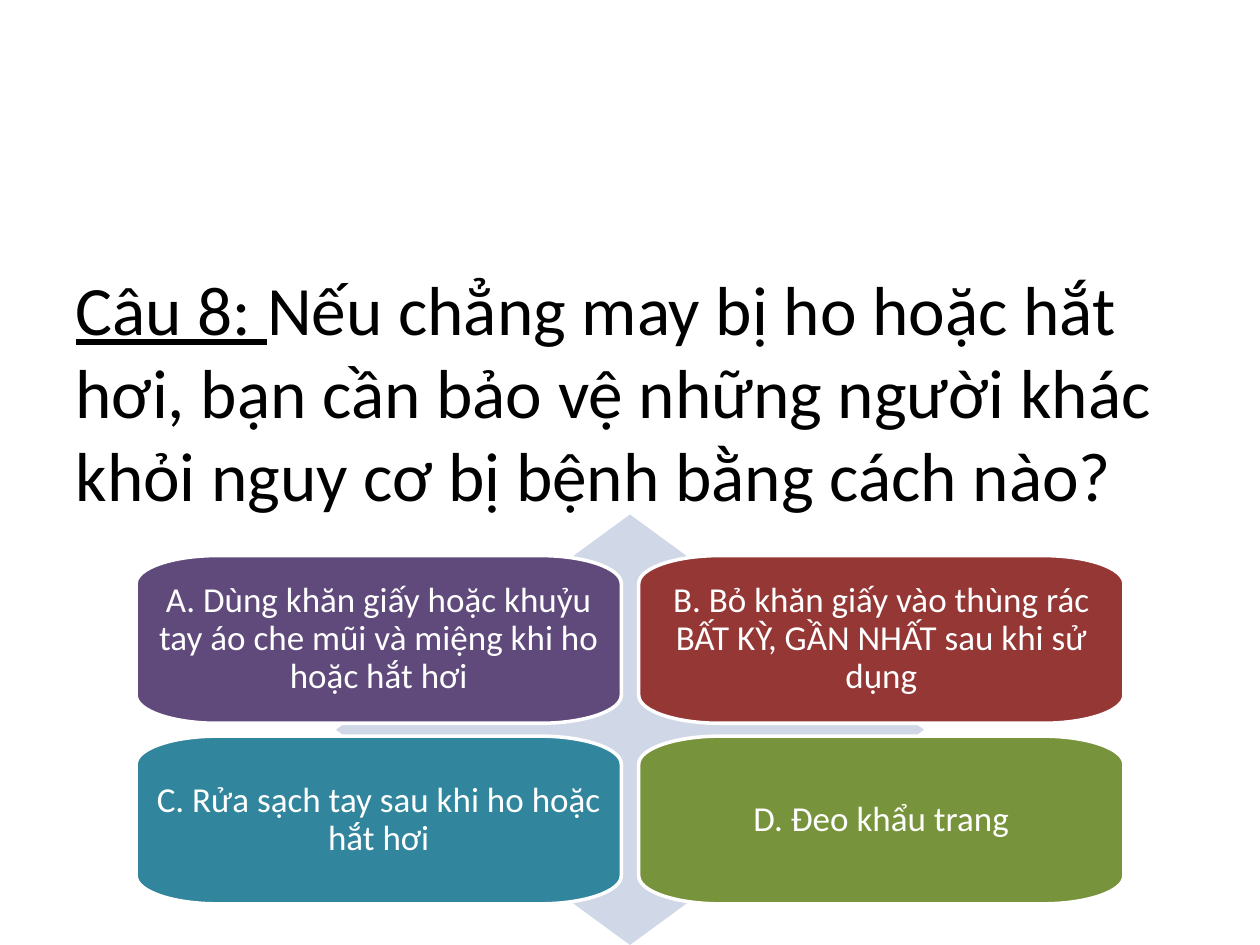
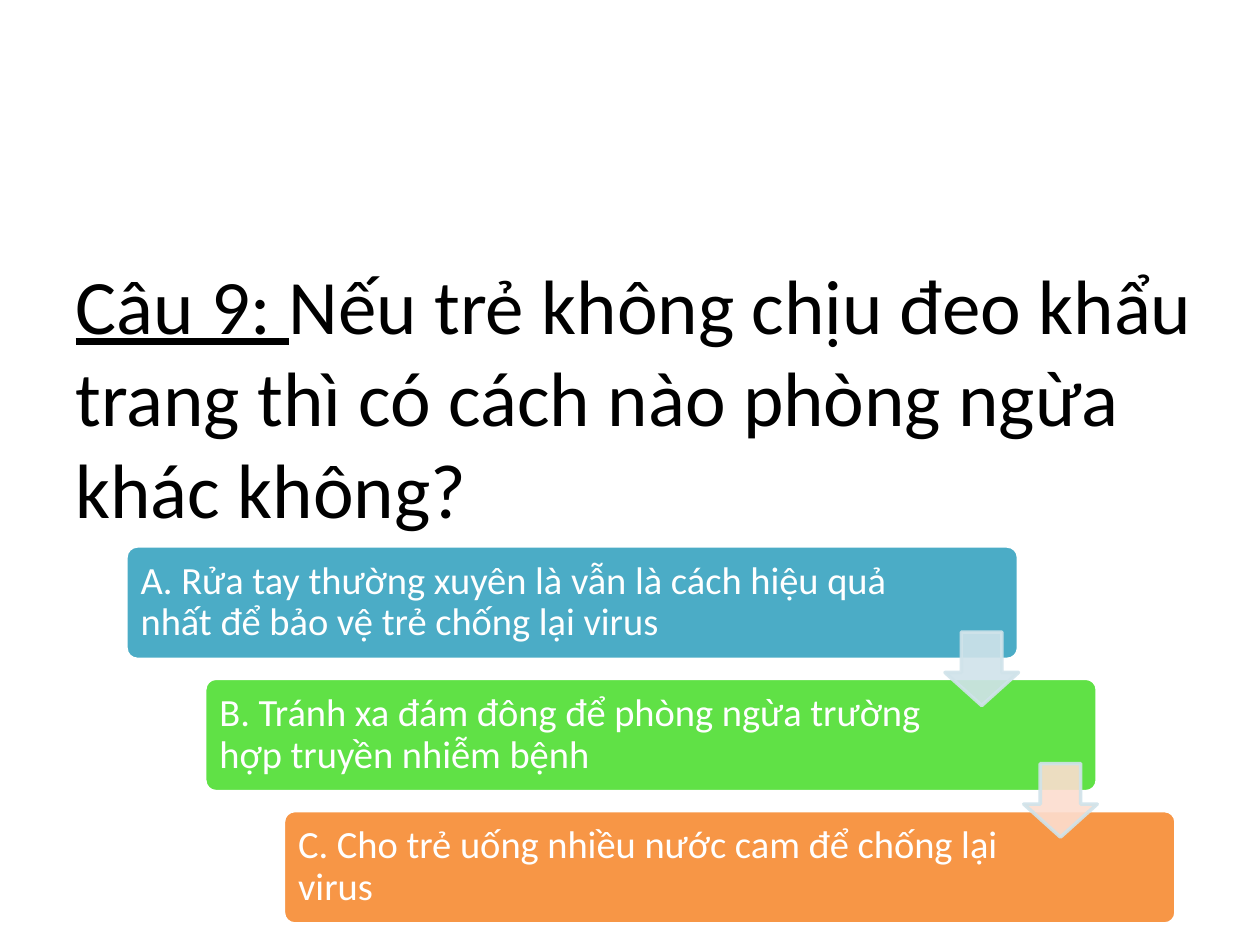
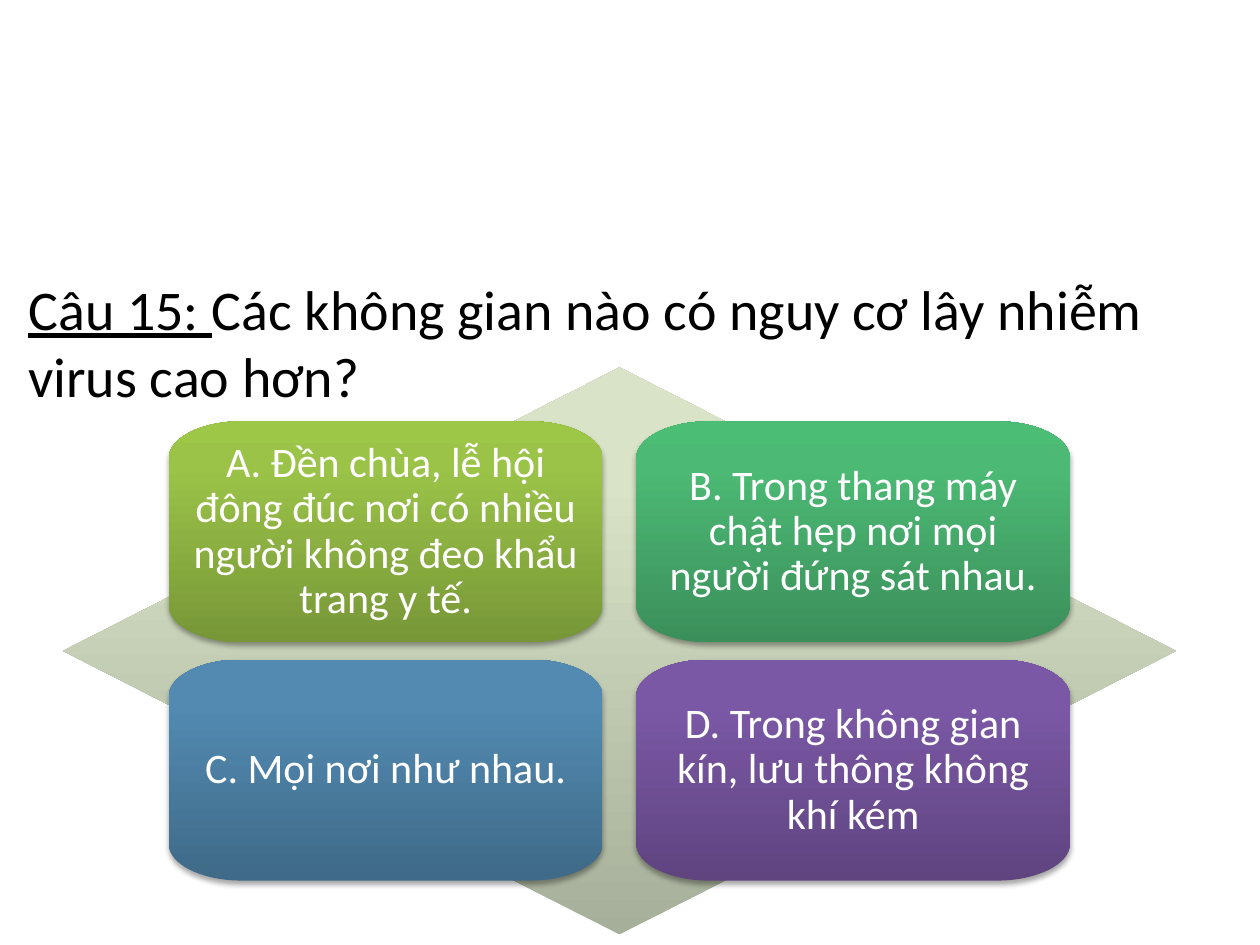
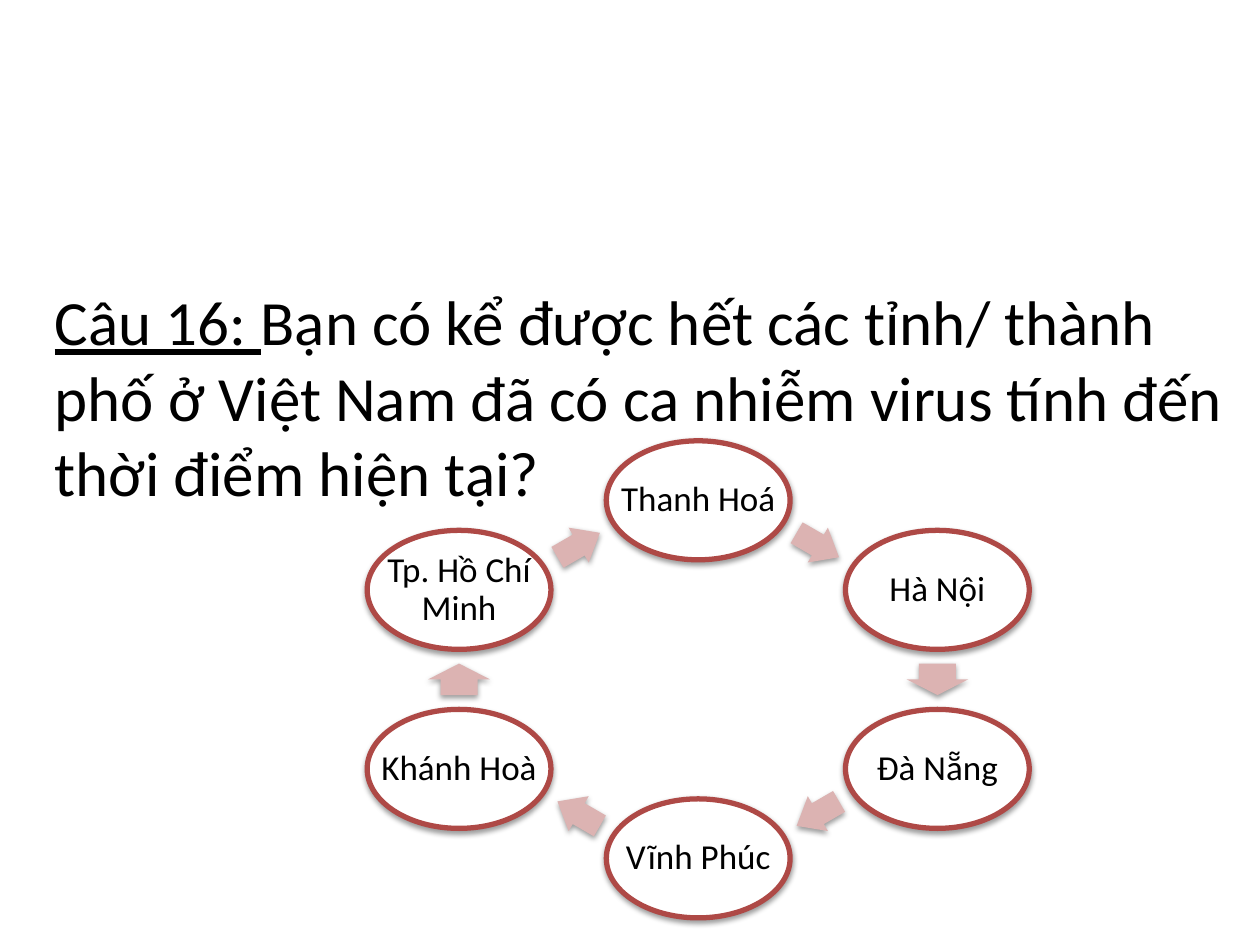
from copy import deepcopy
from math import cos, radians, sin

from lxml.etree import SubElement
from pptx import Presentation
from pptx.dml.color import RGBColor
from pptx.enum.shapes import MSO_SHAPE
from pptx.enum.text import MSO_ANCHOR, MSO_AUTO_SIZE, PP_ALIGN
from pptx.oxml.ns import qn
from pptx.util import Pt

FONT = "Calibri"
BLACK = RGBColor(0, 0, 0)
WHITE = RGBColor(255, 255, 255)
ICE = RGBColor(0xD0, 0xE3, 0xEA)
PEACH = RGBColor(0xFC, 0xDD, 0xCF)
TEAL = RGBColor(0x4B, 0xAC, 0xC6)
LIME = RGBColor(0x60, 0xE1, 0x46)
ORANGE = RGBColor(0xF7, 0x96, 0x46)
RED = RGBColor(0xAE, 0x49, 0x46)
ROSE = RGBColor(0xDC, 0xB3, 0xB2)
PALE = RGBColor(0xD0, 0xD8, 0xE8)
PLUM = RGBColor(0x60, 0x4A, 0x7B)
BRICK = RGBColor(0x95, 0x37, 0x35)
SEA = RGBColor(0x31, 0x85, 0x9C)
OLIVE = RGBColor(0x77, 0x93, 0x3C)
SAGE = [RGBColor(0xA6, 0xAF, 0x99), RGBColor(0xD8, 0xE3, 0xC7), RGBColor(0xD9, 0xE5, 0xC8)]
GRASS = [RGBColor(0x77, 0x97, 0x37), RGBColor(0x9B, 0xC3, 0x48), RGBColor(0x9D, 0xC7, 0x46)]
GREEN = [RGBColor(0x3B, 0x8F, 0x5A), RGBColor(0x4C, 0xBA, 0x75), RGBColor(0x4B, 0xBD, 0x75)]
BLUE = [RGBColor(0x3F, 0x6A, 0x88), RGBColor(0x52, 0x8A, 0xB1), RGBColor(0x51, 0x8A, 0xB3)]
VIOLET = [RGBColor(0x5F, 0x44, 0x80), RGBColor(0x7B, 0x58, 0xA6), RGBColor(0x7C, 0x57, 0xA8)]


def paint(shape, fill, edge=None, width=2, shade=None):
    if isinstance(fill, list):
        shape.fill.gradient()
        shape.fill.gradient_angle = 90
        stops = shape._element.spPr.find(".//" + qn("a:gsLst"))
        stops.append(deepcopy(stops[-1]))
        for stop, spot, tone in zip(shape.fill.gradient_stops, (0, 0.8, 1), fill):
            stop.position = spot
            stop.color.rgb = tone
    else:
        shape.fill.solid()
        shape.fill.fore_color.rgb = fill
    if edge is None:
        shape.line.fill.background()
    else:
        shape.line.color.rgb = edge
        shape.line.width = Pt(width)
    shape.shadow.inherit = False
    if shade:
        drop, alpha = shade
        effects = shape._element.spPr.find(qn("a:effectLst"))
        outer = SubElement(effects, qn("a:outerShdw"), blurRad=str(Pt(3.1)),
                           dist=str(Pt(drop)), dir="5400000", rotWithShape="0")
        tone = SubElement(outer, qn("a:srgbClr"), val="000000")
        SubElement(tone, qn("a:alpha"), val=str(alpha * 1000))


def pill(slide, box, curve, text, size, pads, ink=WHITE, align=PP_ALIGN.CENTER):
    x, y, w, h = box
    rx, ry = curve
    sides = 2 * rx < w
    corners = [((x, y + ry), (x, y), (x + rx, y)),
               ((x + w - rx, y), (x + w, y), (x + w, y + ry)),
               ((x + w, y + h - ry), (x + w, y + h), (x + w - rx, y + h)),
               ((x + rx, y + h), (x, y + h), (x, y + h - ry))]
    points = []
    for start, tip, end in corners:
        if sides or not points:
            points.append(start)
        for edge in (start, end):
            points.append([e + 0.55 * (t - e) for e, t in zip(edge, tip)])
        points.append(end)
    points = [(Pt(px), Pt(py)) for px, py in points]
    pen = slide.shapes.build_freeform(*points[0])
    pen.add_line_segments(points[1:], close=True)
    shape = pen.convert_to_shape()
    lines = list(shape._element.spPr.iter(qn("a:lnTo")))
    for i in range(4):
        first = i * (4 if sides else 3)
        bend, *rest = lines[first:first + 3]
        bend.tag = qn("a:cubicBezTo")
        for line in rest:
            bend.append(line[0])
            line.getparent().remove(line)
    frame = shape.text_frame
    frame.word_wrap = True
    frame.vertical_anchor = MSO_ANCHOR.MIDDLE
    pad, right = pads
    frame.margin_left = frame.margin_top = frame.margin_bottom = Pt(pad)
    frame.margin_right = Pt(right)
    para = frame.paragraphs[0]
    para.text = text
    para.alignment = align
    para.line_spacing = 0.9
    after = SubElement(para._p.get_or_add_pPr(), qn("a:spcAft"))
    SubElement(after, qn("a:spcPct"), val="35000")
    para.font.name = FONT
    para.font.size = Pt(size)
    para.font.color.rgb = ink
    return shape


deck = Presentation()
deck.slide_width = Pt(720)
deck.slide_height = Pt(540)

asks = [
    ("Câu 8: ", "Nếu chẳng may bị ho hoặc hắt hơi, bạn cần bảo vệ những người khác "
     "khỏi nguy cơ bị bệnh bằng cách nào?", 39.6, (36, 144, 648, 158.4)),
    ("Câu 9: ", "Nếu trẻ không chịu đeo khẩu trang thì có cách nào phòng ngừa khác không?",
     44, (36, 132, 678, 188.2)),
    ("Câu 15: ", "Các không gian nào có nguy cơ lây nhiễm virus cao hơn?",
     32, (9, 150, 702, 90)),
    ("Câu 16: ", "Bạn có kể được hết các tỉnh/ thành phố ở Việt Nam đã có ca nhiễm "
     "virus tính đến thời điểm hiện tại?", 36, (24, 168, 690, 116.5)),
]
for label, ask, size, box in asks:
    title = deck.slides.add_slide(deck.slide_layouts[5]).shapes.title
    title.left, title.top, title.width, title.height = map(Pt, box)
    frame = title.text_frame
    frame.auto_size = MSO_AUTO_SIZE.NONE
    frame.vertical_anchor = MSO_ANCHOR.MIDDLE
    para = frame.paragraphs[0]
    para.alignment = PP_ALIGN.LEFT
    para.font.name = FONT
    para.font.size = Pt(size)
    para.font.color.rgb = BLACK
    head = para.add_run()
    head.text = label
    head.font.underline = True
    para.add_run().text = ask
cough, child, space, city = deck.slides

grids = [
    (cough, (192, 294, 336, 246), PALE, (77.8, 317.5, 277.2, 95.8), (287.2, 103.2),
     20, 6.5, WHITE, None,
     [("A. Dùng khăn giấy hoặc khuỷu tay áo che mũi và miệng khi ho hoặc hắt hơi", PLUM),
      ("B. Bỏ khăn giấy vào thùng rác BẤT KỲ, GẦN NHẤT sau khi sử dụng", BRICK),
      ("C. Rửa sạch tay sau khi ho hoặc hắt hơi", SEA),
      ("D. Đeo khẩu trang", OLIVE)]),
    (space, (36, 210, 636, 324), SAGE, (96.5, 240.8, 247.8, 126.3), (267.1, 136.1),
     24, 11.5, None, (1.8, 35),
     [("A. Đền chùa, lễ hội đông đúc nơi có nhiều người không đeo khẩu trang y tế.", GRASS),
      ("B. Trong thang máy chật hẹp nơi mọi người đứng sát nhau.", GREEN),
      ("C. Mọi nơi như nhau.", BLUE),
      ("D. Trong không gian kín, lưu thông không khí kém", VIOLET)]),
]
for slide, back, tone, (x, y, w, h), (dx, dy), size, pad, edge, shade, picks in grids:
    paint(slide.shapes.add_shape(MSO_SHAPE.DIAMOND, *map(Pt, back)), tone)
    for i, (text, fill) in enumerate(picks):
        row, col = divmod(i, 2)
        box = (x + col * dx, y + row * dy, w, h)
        card = pill(slide, box, (w / 6, h / 6), text, size, (pad, pad))
        paint(card, fill, edge, shade=shade)

steps = [
    ("A. Rửa tay thường xuyên là vẫn là cách hiệu quả nhất để bảo vệ trẻ chống lại virus",
     TEAL, 75),
    ("B. Tránh xa đám đông để phòng ngừa trường hợp truyền nhiễm bệnh", LIME, 95.8),
    ("C. Cho trẻ uống nhiều nước cam để chống lại virus", ORANGE, 95.8),
]
for i, (text, fill, right) in enumerate(steps):
    box = (72 + 45 * i, 312 + 75.6 * i, 510, 64.8)
    step = pill(child, box, (6.5, 6.5), text, 22, (8.4, right), align=PP_ALIGN.LEFT)
    paint(step, fill, WHITE)
for i, fill in enumerate([ICE, PEACH]):
    arrow = child.shapes.add_shape(MSO_SHAPE.DOWN_ARROW, Pt(540 + 45 * i),
                                   Pt(361.2 + 75.2 * i), Pt(42), Pt(42))
    arrow.adjustments[0] = 0.55
    arrow.adjustments[1] = 0.45
    paint(arrow, fill, ICE)
    for tone in arrow._element.spPr.iter(qn("a:srgbClr")):
        SubElement(tone, qn("a:alpha"), val="90000")

names = ["Thanh Hoá", "Hà Nội", "Đà Nẵng", "Vĩnh Phúc", "Khánh Hoà", "Tp. Hồ Chí Minh"]
mid_x, mid_y, rad_x, rad_y = 399, 388.2, 157.8, 102.3
w, h = 105, 68
shade = (1.6, 38)
for i, name in enumerate(names):
    turn = radians(60 * i)
    box = (mid_x + rad_x * sin(turn) - w / 2, mid_y - rad_y * cos(turn) - h / 2, w, h)
    node = pill(city, box, (w / 2, h / 2), name, 20, (8, 8), BLACK)
    paint(node, WHITE, RED, 3, shade)
    turn = radians(60 * i + 30)
    near = cos(radians(30))
    long, wide = (18, 35.3) if i in (1, 4) else (28, 23)
    arrow = city.shapes.add_shape(
        MSO_SHAPE.RIGHT_ARROW, Pt(mid_x + near * rad_x * sin(turn) - long / 2),
        Pt(mid_y - near * rad_y * cos(turn) - wide / 2), Pt(long), Pt(wide))
    arrow.adjustments[0] = 0.6
    arrow.adjustments[1] = long / min(long, wide) / 2
    arrow.rotation = 60 * i + 30
    paint(arrow, ROSE, shade=shade)

deck.save("out.pptx")
